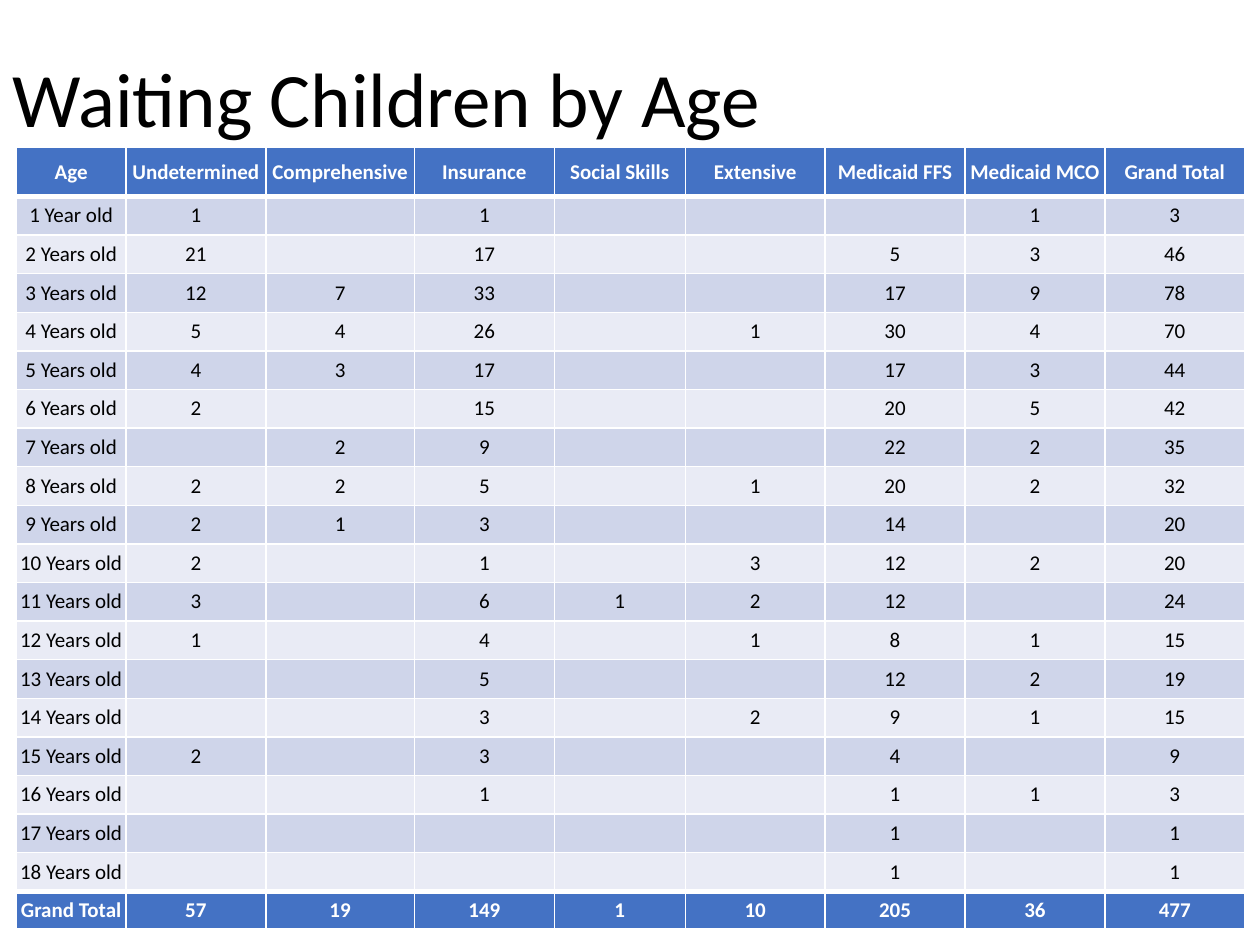
from dataclasses import dataclass

from lxml import etree
from pptx import Presentation
from pptx import util as u
from pptx.dml.color import RGBColor
from pptx.enum import text
from pptx.oxml import ns

TITLE = "Waiting Children by Age"
TOTAL = "Grand Total"
# (heading, column width in inches)
COLUMNS = [
    ("Age", 0.87), ("Undetermined", 1.11), ("Comprehensive", 1.18),
    ("Insurance", 1.11), ("Social Skills", 1.04), ("Extensive", 1.11),
    ("Medicaid FFS", 1.11), ("Medicaid MCO", 1.11), (TOTAL, 1.11),
]
# One row per age from 1 to 18; zero shows as an empty cell
CHILDREN = [
    (1, 0, 1, 0, 0, 0, 1),
    (21, 0, 17, 0, 0, 5, 3),
    (12, 7, 33, 0, 0, 17, 9),
    (5, 4, 26, 0, 1, 30, 4),
    (4, 3, 17, 0, 0, 17, 3),
    (2, 0, 15, 0, 0, 20, 5),
    (0, 2, 9, 0, 0, 22, 2),
    (2, 2, 5, 0, 1, 20, 2),
    (2, 1, 3, 0, 0, 14, 0),
    (2, 0, 1, 0, 3, 12, 2),
    (3, 0, 6, 1, 2, 12, 0),
    (1, 0, 4, 0, 1, 8, 1),
    (0, 0, 5, 0, 0, 12, 2),
    (0, 0, 3, 0, 2, 9, 1),
    (2, 0, 3, 0, 0, 4, 0),
    (0, 0, 1, 0, 0, 1, 1),
    (0, 0, 0, 0, 0, 1, 0),
    (0, 0, 0, 0, 0, 1, 0),
]
TABLE_LEFT, TABLE_TOP, TABLE_HEIGHT = 0.13, 1.17, 6.21
HEADER_HEIGHT, TOTAL_HEIGHT = 0.39, 0.3


@dataclass(frozen=True)
class Theme:
    font: str = "Calibri"
    title_size: int = 44
    cell_size: int = 12
    ink: str = "000000"
    light: str = "FFFFFF"
    accent: str = "4472C4"
    bands: tuple = ("CFD5EA", "E9EBF5")
    thin: int = 1
    thick: int = 3


THEME = Theme()


def set_font(paragraph, size, color, bold=False):
    font = paragraph.font
    font.name, font.size, font.bold = THEME.font, u.Pt(size), bold
    font.color.rgb = RGBColor.from_string(color)


def set_borders(cell, top, bottom):
    """Draw all four cell edges; top and bottom are widths in points."""
    properties = cell._tc.get_or_add_tcPr()
    edges = {"lnL": THEME.thin, "lnR": THEME.thin, "lnT": top, "lnB": bottom}
    for edge, width in edges.items():
        line = etree.SubElement(properties, ns.qn(f"a:{edge}"), w=str(u.Pt(width)))
        fill = etree.SubElement(line, ns.qn("a:solidFill"))
        etree.SubElement(fill, ns.qn("a:srgbClr"), val=THEME.light)


def table_rows():
    """Return the header, the rows by age and the totals as display text."""
    counts = [(*row, sum(row)) for row in CHILDREN]
    totals = [sum(column) for column in zip(*counts)]
    rows = [[heading for heading, _ in COLUMNS]]
    for age, row in enumerate(counts, 1):
        label = f"{age} Year{'s' if age > 1 else ''} old"
        rows.append([label, *(str(count or "") for count in row)])
    return rows + [[TOTAL, *map(str, totals)]]


def add_title(slide):
    box = slide.shapes.add_textbox(0, 0, u.Inches(10), u.Inches(1.63))
    frame = box.text_frame
    frame.word_wrap = True
    frame.vertical_anchor = text.MSO_ANCHOR.MIDDLE
    paragraph = frame.paragraphs[0]
    paragraph.text = TITLE
    paragraph.line_spacing = 0.9
    set_font(paragraph, THEME.title_size, THEME.ink)


def add_age_table(slide):
    rows = table_rows()
    last = len(rows) - 1
    age_height = (TABLE_HEIGHT - HEADER_HEIGHT - TOTAL_HEIGHT) / len(CHILDREN)
    heights = [HEADER_HEIGHT, *[age_height] * len(CHILDREN), TOTAL_HEIGHT]
    table = slide.shapes.add_table(
        len(rows), len(COLUMNS), u.Inches(TABLE_LEFT), u.Inches(TABLE_TOP),
        u.Inches(sum(width for _, width in COLUMNS)), u.Inches(TABLE_HEIGHT),
    ).table
    table.last_row = True
    for column, (_, width) in zip(table.columns, COLUMNS):
        column.width = u.Inches(width)

    # Thick lines set the header and the totals apart from the ages
    rules = [THEME.thick if r in (1, last) else THEME.thin for r in range(last + 2)]
    for r, (row, height) in enumerate(zip(rows, heights)):
        table.rows[r].height = u.Inches(height)
        strong = r in (0, last)
        fill = THEME.accent if strong else THEME.bands[(r - 1) % 2]
        for c, content in enumerate(row):
            cell = table.cell(r, c)
            cell.margin_left = cell.margin_right = 0
            cell.margin_top = cell.margin_bottom = 0
            cell.vertical_anchor = text.MSO_ANCHOR.MIDDLE
            set_borders(cell, rules[r], rules[r + 1])
            cell.fill.solid()
            cell.fill.fore_color.rgb = RGBColor.from_string(fill)
            paragraph = cell.text_frame.paragraphs[0]
            paragraph.text = content
            paragraph.alignment = text.PP_ALIGN.CENTER
            set_font(paragraph, THEME.cell_size, THEME.light if strong else THEME.ink, strong)


def main():
    deck = Presentation()
    deck.slide_width, deck.slide_height = u.Inches(10), u.Inches(7.5)
    slide = deck.slides.add_slide(deck.slide_layouts[6])
    add_title(slide)
    add_age_table(slide)
    deck.save("out.pptx")


if __name__ == "__main__":
    main()
